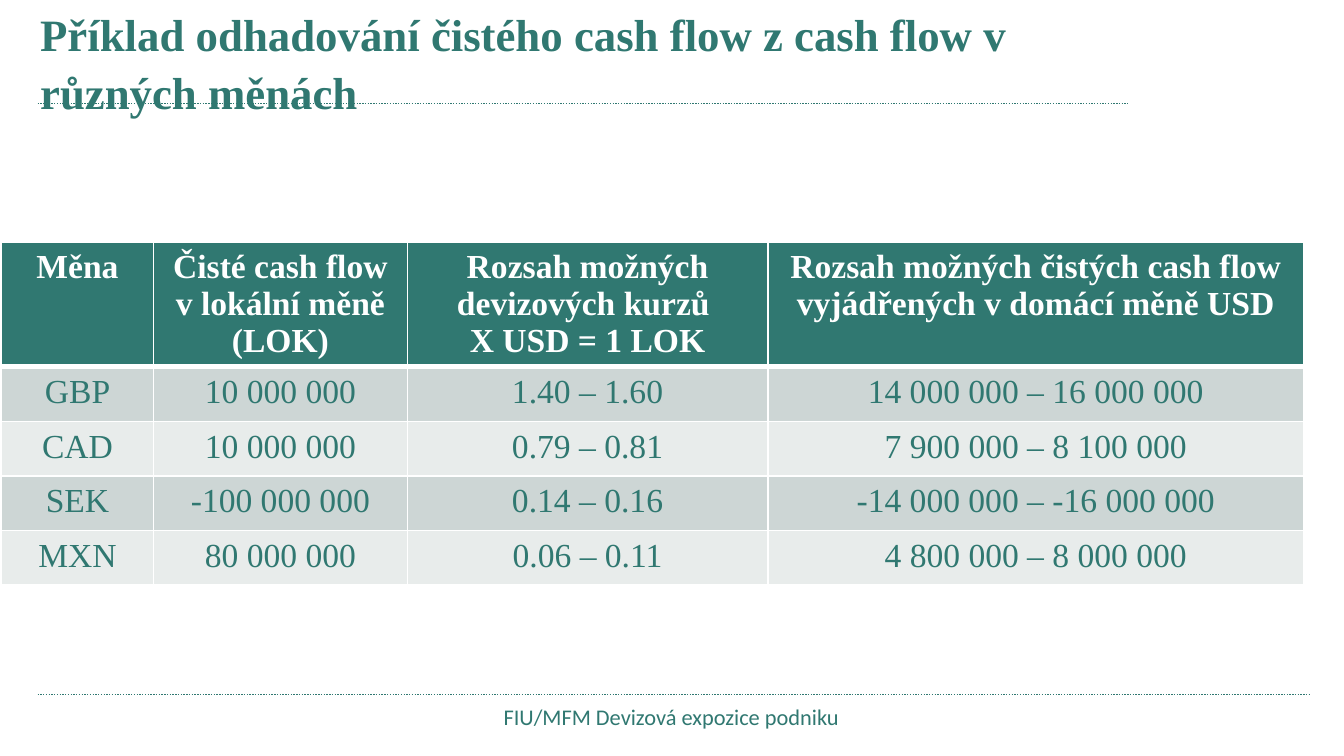
from lxml.etree import SubElement
from pptx import Presentation
from pptx.dml.color import RGBColor as Rgb
from pptx.enum.dml import MSO_LINE
from pptx.enum.shapes import MSO_CONNECTOR as Connector
from pptx.enum.text import MSO_ANCHOR as Anchor, PP_ALIGN as Align
from pptx.oxml import parse_xml
from pptx.oxml.ns import nsdecls, qn
from pptx.util import Cm, Pt

COLORS = {"teal": "307871", "white": "FFFFFF", "band": "CDD6D5", "light": "E8ECEB"}
SERIF, SANS = "Times New Roman", "Calibri"

HEADINGS = [
    "Měna",
    "Čisté cash flow v lokální měně (LOK)",
    "Rozsah možných devizových kurzů \nX USD = 1 LOK",
    "Rozsah možných čistých cash flow vyjádřených v domácí měně USD",
]
CURRENCIES = [
    ["GBP", "10 000 000", "1.40 – 1.60", "14 000 000 – 16 000 000"],
    ["CAD", "10 000 000", "0.79 – 0.81", "7 900 000 – 8 100 000"],
    ["SEK", "-100 000 000", "0.14 – 0.16", "-14 000 000 – -16 000 000"],
    ["MXN", "80 000 000", "0.06 – 0.11", "4 800 000 – 8 000 000"],
]


def write(frame, text, size=18, font=SERIF, color="teal", bold=False,
          align=Align.CENTER, spacing=None):
    frame.text = text
    for paragraph in frame.paragraphs:
        paragraph.alignment = align
        paragraph.line_spacing = spacing
        for run in paragraph.runs:
            run.font.size = Pt(size)
            run.font.name = font
            run.font.bold = bold
            run.font.color.rgb = Rgb.from_string(COLORS[color])


class CashFlowSlide:
    """Holds the slide and the look shared by its elements."""

    def __init__(self, slide):
        self.slide = slide
        self.rule_width = Pt(0.75)

    def rule(self, left, right, y):
        line = self.slide.shapes.add_connector(
            Connector.STRAIGHT, Cm(left), Cm(y), Cm(right), Cm(y))
        line.line.color.rgb = Rgb.from_string(COLORS["teal"])
        line.line.width = self.rule_width
        line.line.dash_style = MSO_LINE.ROUND_DOT
        SubElement(line._element.spPr, qn("a:effectLst"))

    def label(self, text, left, top, width, height, anchor=Anchor.TOP, **style):
        box = self.slide.shapes.add_textbox(Cm(left), Cm(top), Cm(width), Cm(height))
        box.text_frame.word_wrap = True
        box.text_frame.vertical_anchor = anchor
        write(box.text_frame, text, **style)

    def border(self, cell, **widths):
        properties = cell._tc.get_or_add_tcPr()
        for position, (side, width) in enumerate(widths.items()):
            properties.insert(position, parse_xml(
                f'<a:ln{side} {nsdecls("a")} w="{Pt(width)}"><a:solidFill>'
                f'<a:srgbClr val="{COLORS["white"]}"/></a:solidFill></a:ln{side}>'))

    def table(self, rows, left, top, widths, heights):
        grid = self.slide.shapes.add_table(
            len(rows), len(widths), Cm(left), Cm(top),
            Cm(sum(widths)), Cm(sum(heights))).table
        for column, width in zip(grid.columns, widths):
            column.width = Cm(width)
        for r, (values, height) in enumerate(zip(rows, heights)):
            grid.rows[r].height = Cm(height)
            header = r == 0
            fill = "teal" if header else "band" if r % 2 else "light"
            for c, value in enumerate(values):
                cell = grid.cell(r, c)
                cell.fill.solid()
                cell.fill.fore_color.rgb = Rgb.from_string(COLORS[fill])
                write(cell.text_frame, value, bold=header,
                      color="white" if header else "teal")
                self.border(cell, L=1, R=1, T=3 if r == 1 else 1, B=3 if header else 1)


def main():
    deck = Presentation()
    deck.slide_width, deck.slide_height = Cm(25.4), Cm(14.29)
    page = CashFlowSlide(deck.slides.add_slide(deck.slide_layouts[6]))
    page.rule(0.71, 21.31, 1.96)
    page.rule(0.71, 24.77, 13.13)
    page.table([HEADINGS] + CURRENCIES, 0.03, 4.57, [2.87, 4.8, 6.81, 10.13],
               [2.36] + [1.03] * len(CURRENCIES))
    page.label("Příklad odhadování čistého cash flow z cash flow v různých měnách",
               0.51, -0.08, 20.6, 1.42, size=24, bold=True, align=Align.LEFT, spacing=1.08)
    page.label("FIU/MFM Devizová expozice podniku", 0.79, 13.15, 23.8, 0.79,
               anchor=Anchor.MIDDLE, size=12, font=SANS)
    deck.save("out.pptx")


if __name__ == "__main__":
    main()
